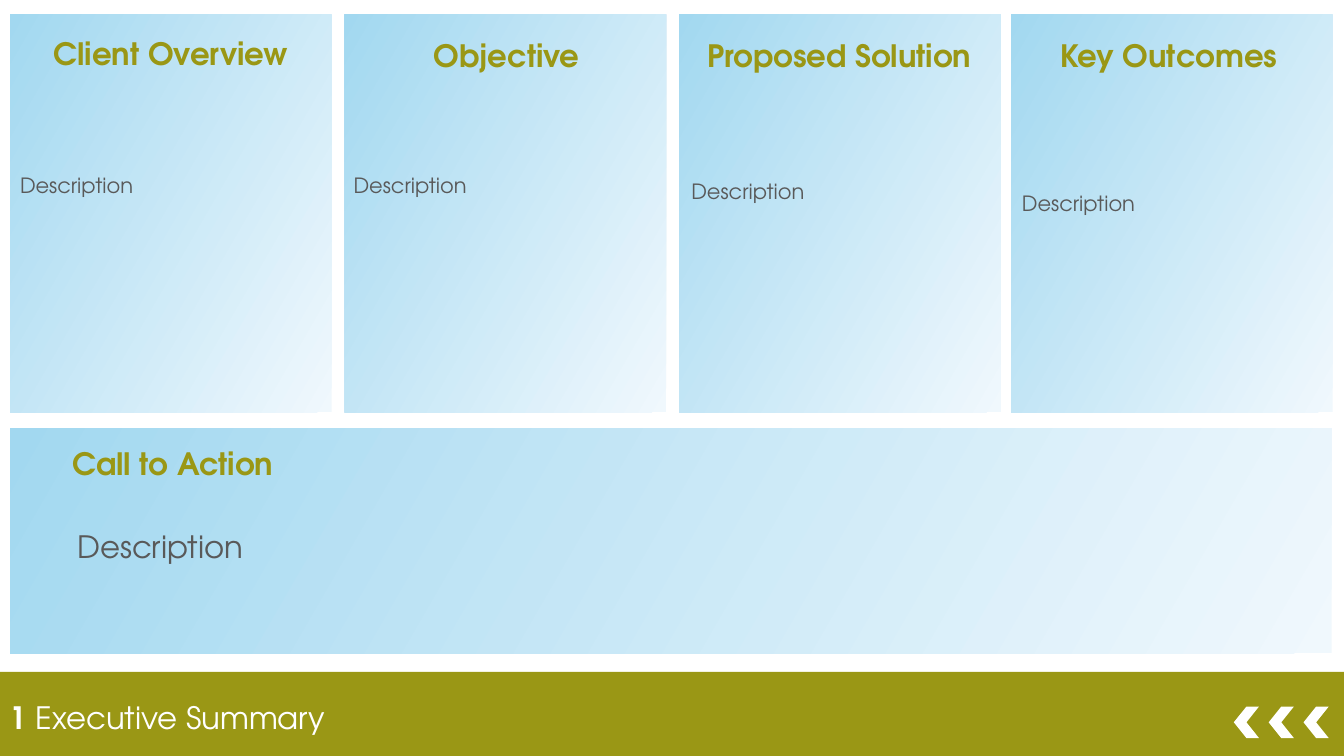
from pptx import Presentation
from pptx.dml.color import RGBColor
from pptx.enum.shapes import MSO_SHAPE
from pptx.enum.text import MSO_AUTO_SIZE, PP_ALIGN
from pptx.util import Pt

RECT = MSO_SHAPE.RECTANGLE
CHEVRON = MSO_SHAPE.CHEVRON
GROW = MSO_AUTO_SIZE.SHAPE_TO_FIT_TEXT
LEFT = PP_ALIGN.LEFT
CENTER = PP_ALIGN.CENTER

FONT = "TeX Gyre Adventor"
OLIVE = "9A9715"
GRAY = "595959"
WHITE = "FFFFFF"
PALE = "F0F8FD"
SKY = "A2D8F0"

CARDS = [
    ("Client Overview", 7.2, 7.2, 21.6, 7.2, 119.5),
    ("Objective", 246.2, 247, 23, 245.5, 119.5),
    ("Proposed Solution", 485.3, 484.6, 23, 486.7, 123.8),
    ("Key Outcomes", 722.2, 720, 23, 722.9, 132.5),
]


def color(code):
    return RGBColor.from_string(code)


def add_form(slide, kind, left, top, width, height):
    form = slide.shapes.add_shape(kind, Pt(left), Pt(top), Pt(width), Pt(height))
    form.shadow.inherit = False
    form.line.fill.background()
    return form


def add_solid(slide, kind, left, top, width, height, code):
    form = add_form(slide, kind, left, top, width, height)
    form.fill.solid()
    form.fill.fore_color.rgb = color(code)
    return form


def add_panel(slide, left, top, width, height):
    fill = add_form(slide, RECT, left, top, width, height).fill
    fill.gradient()
    fill.gradient_angle = 150
    for stop, code in zip(fill.gradient_stops, (PALE, SKY)):
        stop.color.rgb = color(code)


def add_text(slide, left, top, width, height, runs, size, code, align=LEFT):
    box = slide.shapes.add_textbox(Pt(left), Pt(top), Pt(width), Pt(height))
    frame = box.text_frame
    frame.word_wrap = True
    frame.auto_size = GROW
    para = frame.paragraphs[0]
    para.alignment = align
    for text, bold in runs:
        run = para.add_run()
        run.text = text
        run.font.name = FONT
        run.font.size = Pt(size)
        run.font.bold = bold
        run.font.color.rgb = color(code)


def add_title(slide, left, top, text):
    add_text(slide, left, top, 229.7, 33.9, [(text, True)], 22, OLIVE, CENTER)


def add_note(slide, left, top, width, height, size):
    add_text(slide, left, top, width, height, [("Description", False)], size, GRAY)


def add_footer(slide):
    add_solid(slide, RECT, 0, 480, 960, 60, OLIVE)
    runs = [("1", True), (" Executive Summary", False)]
    add_text(slide, 0, 495.4, 660, 33.9, runs, 22, WHITE)
    for step in range(3):
        mark = add_solid(slide, CHEVRON, 881.3 + step * 24.9, 504.7, 18, 22.5, WHITE)
        mark.rotation = 180


def main():
    deck = Presentation()
    deck.slide_width = Pt(960)
    deck.slide_height = Pt(540)
    slide = deck.slides.add_slide(deck.slide_layouts[6])
    add_footer(slide)
    for title, left, title_x, title_y, note_x, note_y in CARDS:
        add_panel(slide, left, 10.6, 229.7, 283.9)
        add_title(slide, title_x, title_y, title)
        add_note(slide, note_x, note_y, 231.8, 25.4, 15)
    add_panel(slide, 7.2, 306, 944, 160.7)
    add_title(slide, 8.6, 313.9, "Call to Action")
    add_note(slide, 48.2, 373.7, 887.8, 33.9, 22)
    deck.save("out.pptx")


if __name__ == "__main__":
    main()
